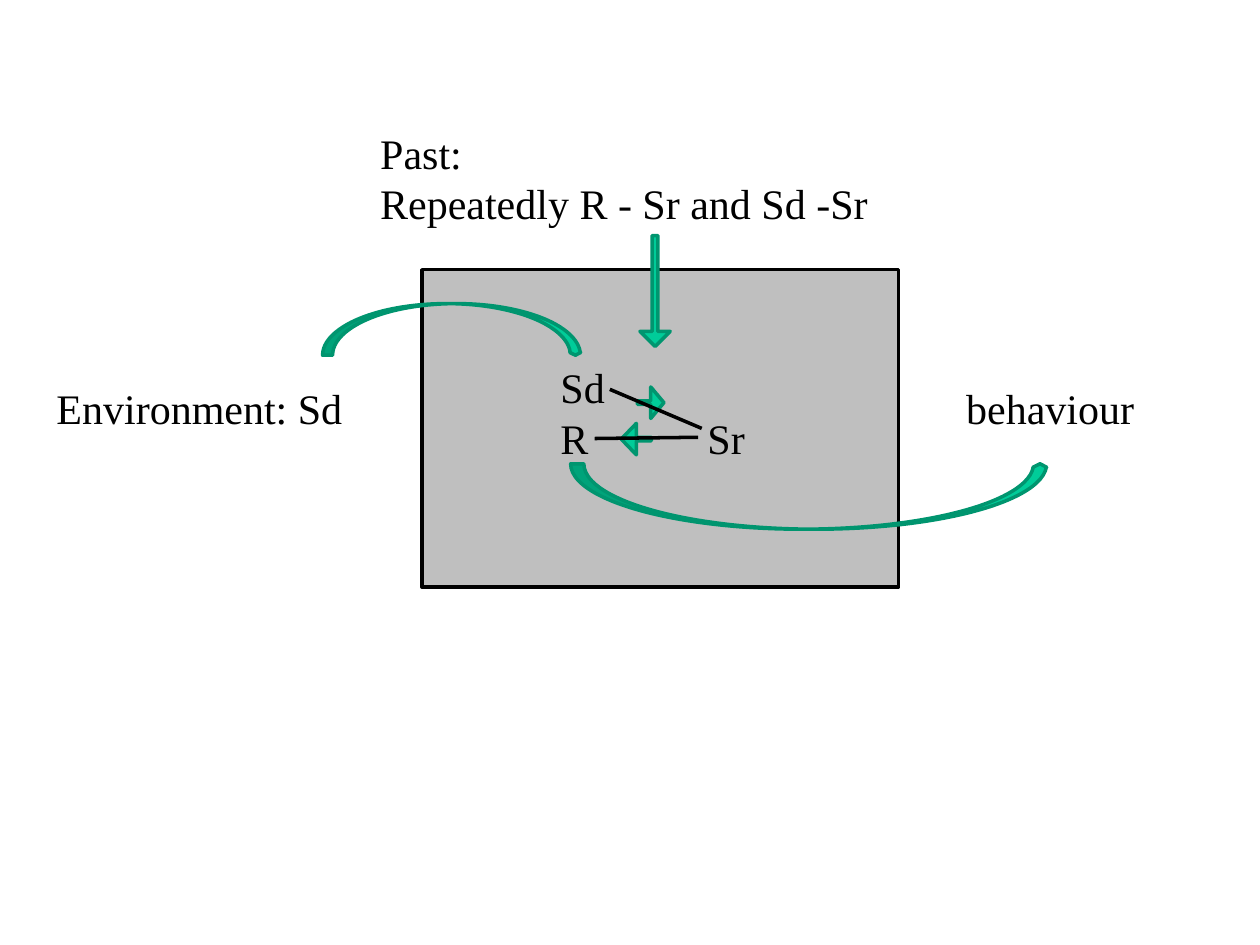
from lxml.etree import SubElement
from pptx import Presentation
from pptx.dml.color import RGBColor
from pptx.enum.shapes import MSO_CONNECTOR as Connector, MSO_SHAPE as Shape
from pptx.enum.text import MSO_ANCHOR as Anchor, PP_ALIGN as Align
from pptx.oxml.ns import qn
from pptx.util import Pt

COLORS = {"ink": "000000", "chamber": "BFBFBF", "arrow": "00CC99", "arrow_edge": "00956F"}
FONT = "Times New Roman"
SR_TAB = 84


def color(name):
    """Return the named palette colour."""
    return RGBColor.from_string(COLORS[name])


def add_label(page, box, lines):
    """Add a text box with one paragraph per line and return its paragraphs."""
    frame = page.shapes.add_textbox(*map(Pt, box)).text_frame
    frame.word_wrap = True
    frame.vertical_anchor = Anchor.TOP
    frame.text = "\n".join(lines)
    for para in frame.paragraphs:
        para.alignment = Align.LEFT
        para.font.name = FONT
        para.font.size = Pt(24)
        para.font.color.rgb = color("ink")
    return frame.paragraphs


def add_outlined(page, kind, box, fill, edge):
    """Add a filled preset shape with a two-point outline."""
    shape = page.shapes.add_shape(kind, *map(Pt, box))
    shape.shadow.inherit = False
    shape.fill.solid()
    shape.fill.fore_color.rgb = color(fill)
    shape.line.color.rgb = color(edge)
    shape.line.width = Pt(2)
    return shape


def add_arrow(page, kind, box, adjustments, rotation=0, flipped=False):
    """Add a green block arrow, optionally rotated and mirrored."""
    arrow = add_outlined(page, kind, box, "arrow", "arrow_edge")
    for index, value in enumerate(adjustments):
        arrow.adjustments[index] = value
    arrow.rotation = rotation
    if flipped:
        arrow.element.spPr.find(qn("a:xfrm")).set("flipH", "1")


def add_link(page, start, end):
    """Add a straight black line between two points."""
    link = page.shapes.add_connector(Connector.STRAIGHT, *map(Pt, (*start, *end)))
    link.line.color.rgb = color("ink")
    link.line.width = Pt(2)
    SubElement(link.element.spPr, qn("a:effectLst"))


def add_chamber(page, box):
    """Draw the grey chamber with the Sd, R and Sr associations."""
    left, top, _, _ = box
    add_outlined(page, Shape.RECTANGLE, box, "chamber", "ink")
    paras = add_label(page, (left + 72, top + 49, 124.5, 94.3), ["Sd", "R\tSr"])
    tabs = SubElement(paras[1]._p.get_or_add_pPr(), qn("a:tabLst"))
    SubElement(tabs, qn("a:tab"), pos=str(Pt(SR_TAB)), algn="l")
    paras[1]._p.pPr.insert(0, tabs)
    for x, y, width, flipped in ((123.1, 67, 15.1, True), (113.8, 87.8, 17.3, False)):
        add_arrow(page, Shape.LEFT_ARROW, (left + x, top + y, width, 18), (0.108, 0.5), flipped=flipped)
    for x1, y1, x2, y2 in ((107.3, 68.4, 159.8, 90.7), (98.6, 96.5, 157.7, 95.8)):
        add_link(page, (left + x1, top + y1), (left + x2, top + y2))


def add_past(page, box):
    """Write the past history and its arrow into the chamber."""
    left, top, _, height = box
    add_label(page, box, ["Past:", "Repeatedly R - Sr and Sd -Sr"])
    add_arrow(page, Shape.DOWN_ARROW, (left + 155.5, top + height, 17.3, 63.4), (0.187, 0.5))


def add_environment(page, box):
    """Write the environment and its curve towards Sd."""
    left, top, _, _ = box
    add_label(page, box, ["Environment: Sd"])
    add_arrow(page, Shape.CURVED_UP_ARROW, (left + 159.1, top - 41.8, 147.6, 29.5),
              (0.194, 0.211, 0.054), rotation=180, flipped=True)


def add_behaviour(page, box):
    """Write the behaviour and the curve that reaches it from R."""
    left, top, _, _ = box
    add_label(page, box, ["behaviour"])
    add_arrow(page, Shape.CURVED_UP_ARROW, (left - 218.9, top + 49.7, 272.2, 37.4),
              (0.201, 0.211, 0.054))


def main():
    """Build and save the slide."""
    deck = Presentation()
    deck.slide_width, deck.slide_height = Pt(720), Pt(540)
    page = deck.slides.add_slide(deck.slide_layouts[6])
    add_chamber(page, (241.2, 154.1, 272.2, 181.4))
    add_past(page, (210.2, 69.1, 310.3, 65.5))
    add_environment(page, (25.2, 215.3, 189.4, 36.7))
    add_behaviour(page, (545, 215.3, 121, 36.7))
    deck.save("out.pptx")


if __name__ == "__main__":
    main()
